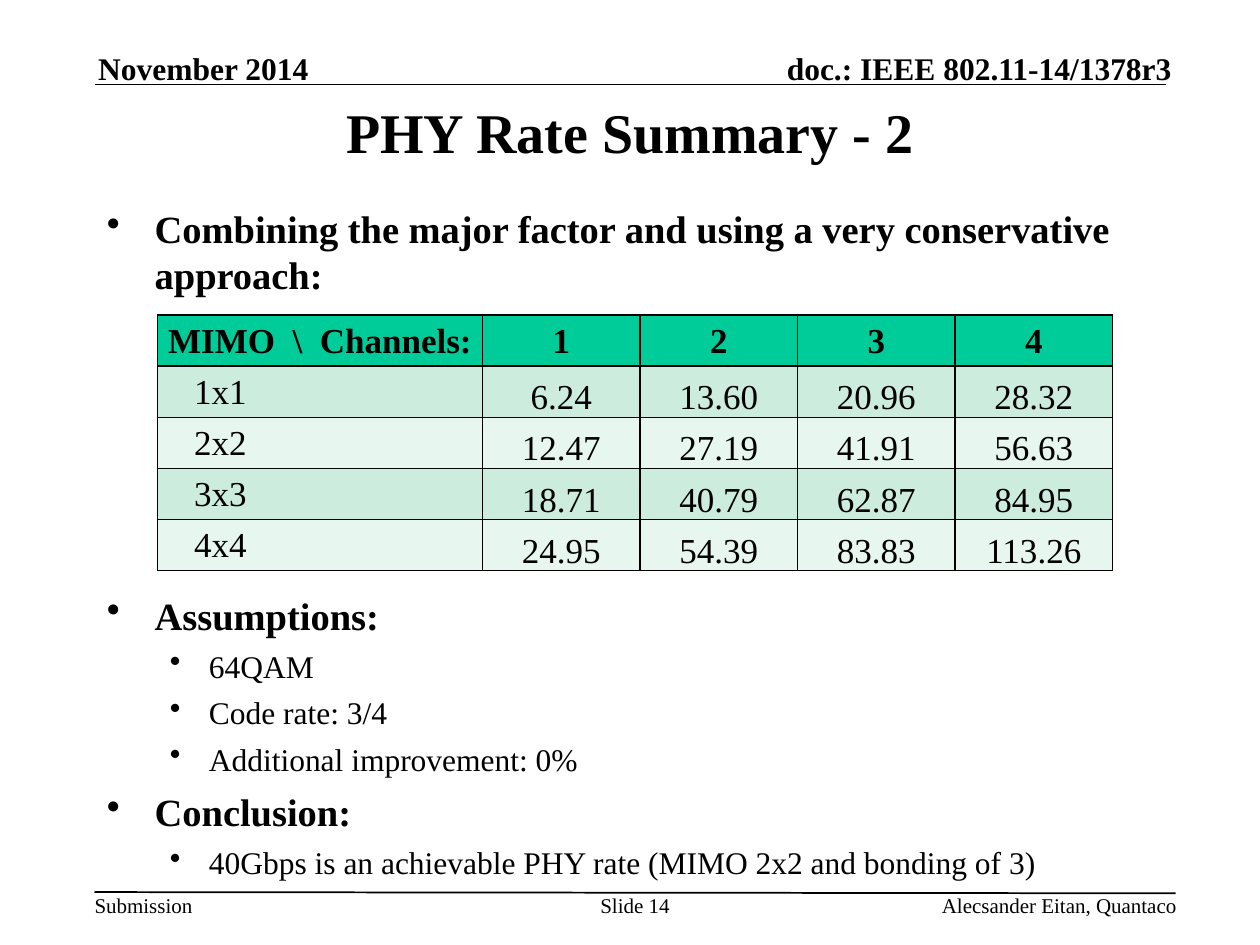
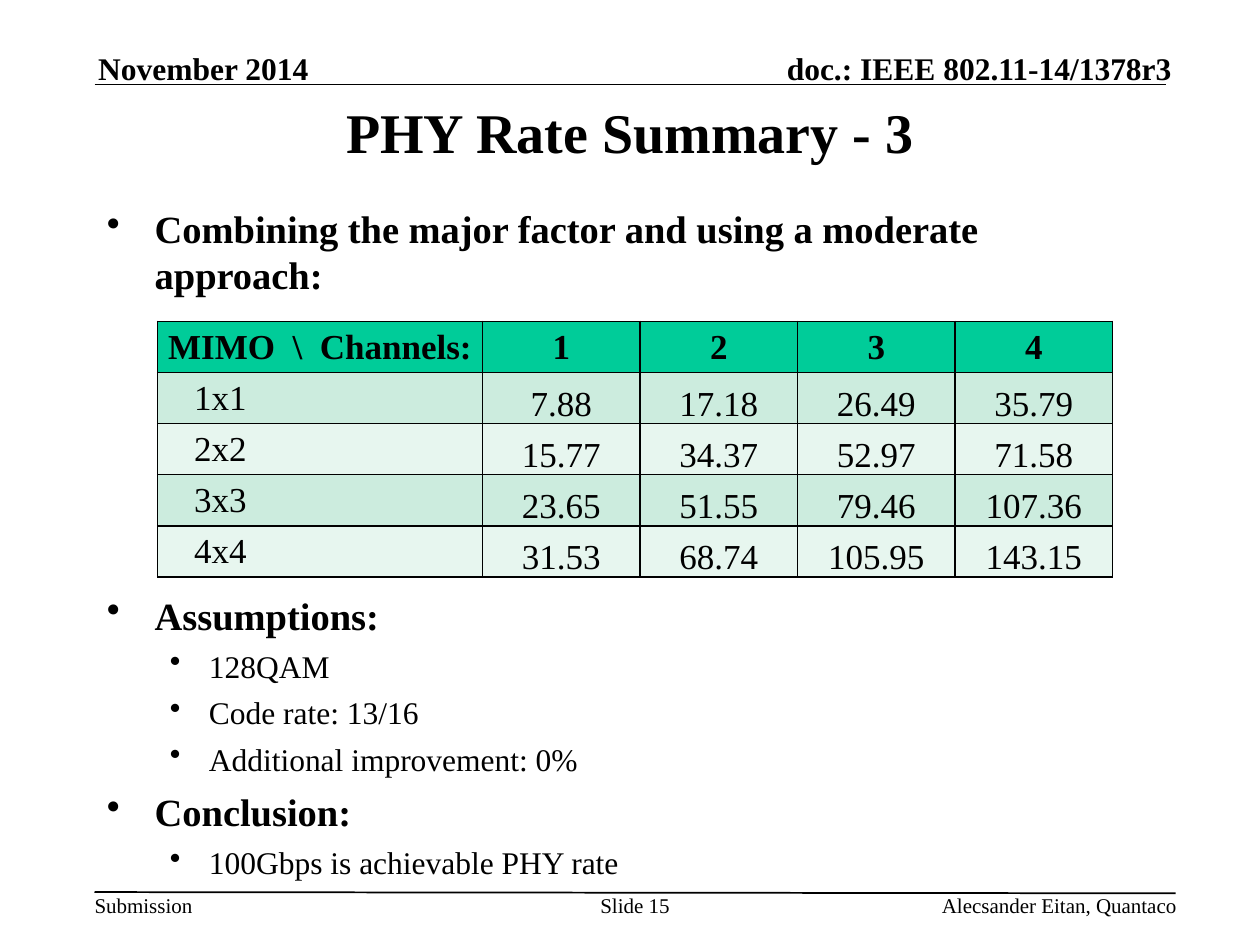
"""Build two PHY rate summary slides with a shared header, footer and table style."""
import pptx
import pptx.util
import pptx.dml.color
import pptx.enum.shapes
import pptx.enum.text
import pptx.oxml
import pptx.oxml.ns
from pptx.util import Inches

COLORS = {"ink": "000000", "head": "00CC99", "odd": "CCECDE", "even": "E7F6EF"}
FONT = "Times New Roman"
NS = pptx.oxml.ns.nsdecls("a")
ALIGN = pptx.enum.text.PP_ALIGN
ANCHOR = pptx.enum.text.MSO_ANCHOR
LEFT, CENTER, RIGHT = ALIGN.LEFT, ALIGN.CENTER, ALIGN.RIGHT
TOP, MIDDLE, BOTTOM = ANCHOR.TOP, ANCHOR.MIDDLE, ANCHOR.BOTTOM


def rgb(name):
    return pptx.dml.color.RGBColor.from_string(COLORS[name])


def write(tf, text, cell=None, size=18, bold=False, align=LEFT, anchor=TOP,
          margins=(0, 0, 0, 0), before=0, bullet=None, level=0):
    box = cell or tf
    box.vertical_anchor = anchor
    box.margin_left, box.margin_top, box.margin_right, box.margin_bottom = map(Inches, margins)
    p = tf.paragraphs[0] if not tf.paragraphs[0].runs else tf.add_paragraph()
    p.alignment, p.level = align, level
    p.space_before = pptx.util.Pt(before)
    if bullet:
        indent, hang = bullet
        pPr = p._p.get_or_add_pPr()
        pPr.set("marL", str(Inches(indent)))
        pPr.set("indent", str(-Inches(hang)))
        pPr.append(pptx.oxml.parse_xml(
            f'<a:buClr {NS}><a:srgbClr val="{COLORS["ink"]}"/></a:buClr>'))
        pPr.append(pptx.oxml.parse_xml(f'<a:buChar {NS} char="•"/>'))
    r = p.add_run()
    r.text = text
    r.font.name, r.font.size, r.font.bold = FONT, pptx.util.Pt(size), bold
    r.font.color.rgb = rgb("ink")


SLIDES = [
    dict(number=14, title="PHY Rate Summary - 2", approach="very conservative", table_top=2.5,
         rates=[["6.24", "13.60", "20.96", "28.32"],
                ["12.47", "27.19", "41.91", "56.63"],
                ["18.71", "40.79", "62.87", "84.95"],
                ["24.95", "54.39", "83.83", "113.26"]],
         assumptions=["64QAM", "Code rate: 3/4", "Additional improvement: 0%"],
         conclusion="40Gbps is an achievable PHY rate (MIMO 2x2 and bonding of 3)"),
    dict(number=15, title="PHY Rate Summary - 3", approach="moderate", table_top=2.55,
         rates=[["7.88", "17.18", "26.49", "35.79"],
                ["15.77", "34.37", "52.97", "71.58"],
                ["23.65", "51.55", "79.46", "107.36"],
                ["31.53", "68.74", "105.95", "143.15"]],
         assumptions=["128QAM", "Code rate: 13/16", "Additional improvement: 0%"],
         conclusion="100Gbps is achievable PHY rate"),
]
RULES = [(0.75, 0.67, 9.25, 0.67), (0.75, 7.08, 9.33, 7.09)]
HEADER = dict(size=18, bold=True, anchor=BOTTOM)
FOOTER = dict(size=12)
BODY_MARGINS = (0.1, 0.05, 0.1, 0.05)
HEADING = dict(size=22, bold=True, bullet=(0.38, 0.38), before=6, margins=BODY_MARGINS)
ITEM = dict(size=18, bullet=(0.81, 0.31), before=5, level=1, margins=BODY_MARGINS)
TABLE_GAP = 168
COLUMNS = [2.58] + [1.25] * 4
TABLE_HEIGHT = 2.03
HEAD_CELL = dict(bold=True, align=CENTER, anchor=MIDDLE, margins=(0.01, 0.01, 0.01, 0))
MIMO_CELL = dict(anchor=MIDDLE, margins=(0.29, 0.01, 0.01, 0))
RATE_CELL = dict(align=CENTER, anchor=BOTTOM)

prs = pptx.Presentation()
prs.slide_width, prs.slide_height = Inches(10), Inches(7.5)

for data in SLIDES:
    s = prs.slides.add_slide(prs.slide_layouts[5])

    for rule in RULES:
        line = s.shapes.add_connector(pptx.enum.shapes.MSO_CONNECTOR.STRAIGHT,
                                      *map(Inches, rule))
        line.line.color.rgb = rgb("ink")
        line.line.width = pptx.util.Pt(1)
        line._element.spPr.append(pptx.oxml.parse_xml(f"<a:effectLst {NS}/>"))

    for text, box, align, fmt in [
        ("Submission", (0.75, 7.08, 0.79, 0.2), LEFT, FOOTER),
        ("doc.: IEEE 802.11-14/1378r3", (5.47, 0.39, 3.83, 0.3), RIGHT, HEADER),
        ("November 2014", (0.78, 0.39, 2.6, 0.3), LEFT, HEADER),
        ("Alecsander Eitan, Quantaco", (6.56, 7.08, 2.78, 0.18), RIGHT, FOOTER),
        (f"Slide {data['number']}", (4.75, 7.08, 0.58, 0.4), CENTER, FOOTER),
    ]:
        tf = s.shapes.add_textbox(*map(Inches, box)).text_frame
        tf.word_wrap = True
        write(tf, text, align=align, **fmt)

    title = s.shapes.title
    title.left, title.top, title.width, title.height = map(Inches, (0.75, 0.75, 8.5, 0.58))
    title.text_frame.auto_size = pptx.enum.text.MSO_AUTO_SIZE.NONE
    write(title.text_frame, data["title"], size=32, bold=True, align=CENTER, anchor=MIDDLE,
          margins=BODY_MARGINS)

    tf = s.shapes.add_textbox(*map(Inches, (0.75, 1.58, 8.5, 5.29))).text_frame
    tf.word_wrap = True
    write(tf, f"Combining the major factor and using a {data['approach']} approach:", **HEADING)
    write(tf, "Assumptions:", **{**HEADING, "before": TABLE_GAP})
    for assumption in data["assumptions"]:
        write(tf, assumption, **ITEM)
    write(tf, "Conclusion:", **HEADING)
    write(tf, data["conclusion"], **ITEM)

    rows = [["MIMO  \\  Channels:", "1", "2", "3", "4"]]
    rows += [[f"{n}x{n}"] + rates for n, rates in enumerate(data["rates"], 1)]
    table = s.shapes.add_table(len(rows), len(COLUMNS), Inches(1.25), Inches(data["table_top"]),
                               Inches(sum(COLUMNS)), Inches(TABLE_HEIGHT)).table
    for column, width in zip(table.columns, COLUMNS):
        column.width = Inches(width)
    for i, row in enumerate(rows):
        table.rows[i].height = Inches(TABLE_HEIGHT / len(rows))
        fill = "head" if i == 0 else "odd" if i % 2 else "even"
        for j, text in enumerate(row):
            cell = table.cell(i, j)
            tcPr = cell._tc.get_or_add_tcPr()
            for side in "LRTB":
                tcPr.append(pptx.oxml.parse_xml(
                    f'<a:ln{side} {NS} w="12700"><a:solidFill>'
                    f'<a:srgbClr val="{COLORS["ink"]}"/></a:solidFill></a:ln{side}>'))
            cell.fill.solid()
            cell.fill.fore_color.rgb = rgb(fill)
            fmt = HEAD_CELL if i == 0 else MIMO_CELL if j == 0 else RATE_CELL
            write(cell.text_frame, text, cell=cell, size=20, **fmt)

prs.save("out.pptx")
